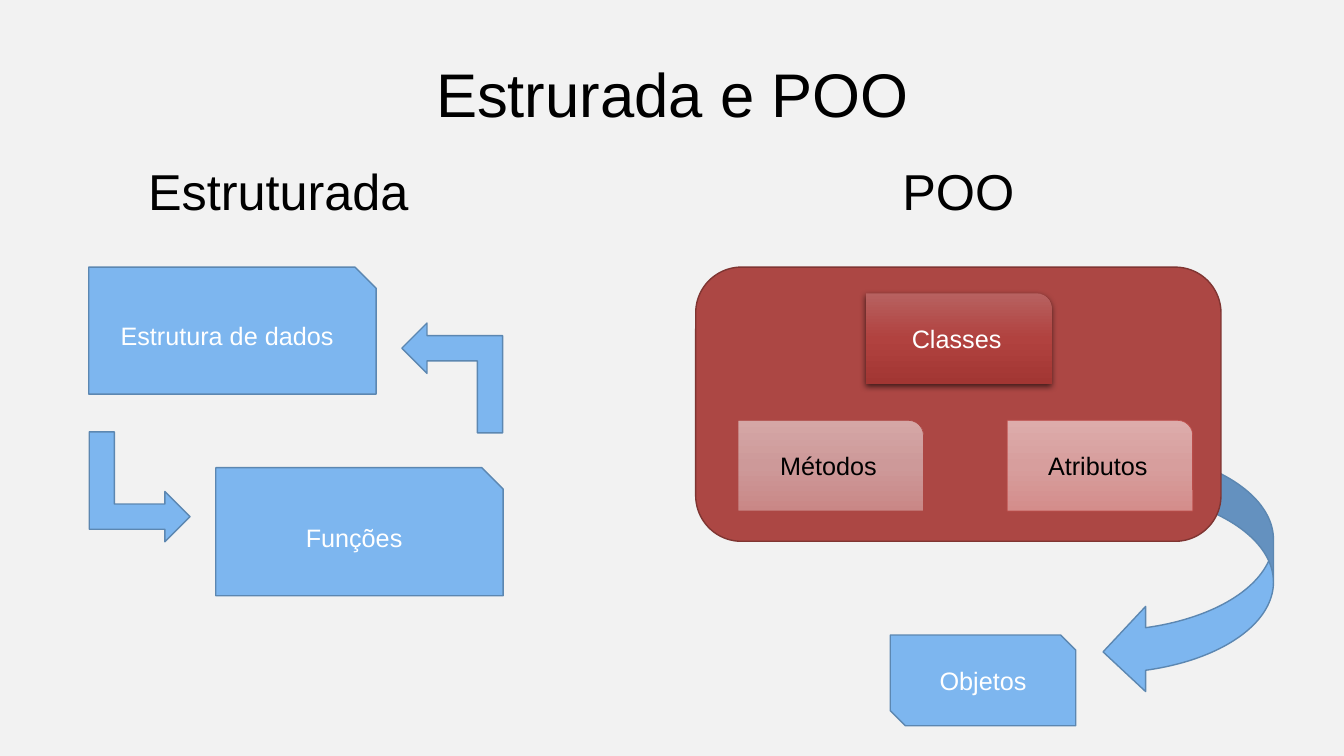
"""Build a slide comparing structured and object-oriented programming."""
from copy import deepcopy

from lxml.etree import SubElement
from pptx import Presentation
from pptx.dml.color import RGBColor
from pptx.enum.shapes import MSO_SHAPE as SHAPE
from pptx.enum.text import MSO_ANCHOR as ANCHOR, PP_ALIGN as ALIGN
from pptx.oxml.ns import qn
from pptx.util import Inches, Pt

BLUE, BLUE_EDGE = "7DB6EF", "5C87B1"
RED, RED_EDGE = "AC4744", "7F3532"
WHITE, BLACK = "FFFFFF", "000000"


def color(value):
    return RGBColor.from_string(value)


def write(frame, text, size, ink, align=ALIGN.CENTER):
    frame.text = text
    frame.word_wrap = True
    paragraph = frame.paragraphs[0]
    paragraph.alignment = align
    font = paragraph.runs[0].font
    font.name, font.size = "Arial", Pt(size)
    font.color.rgb = color(ink)


deck = Presentation()
deck.slide_width, deck.slide_height = Inches(13.33), Inches(7.5)
slide = deck.slides.add_slide(deck.slide_layouts[5])
slide.background.fill.solid()
slide.background.fill.fore_color.rgb = color("F2F2F2")

heading = slide.shapes.title
heading.left, heading.top = Inches(0.67), Inches(0.3)
heading.width, heading.height = Inches(12), Inches(1.25)
write(heading.text_frame, "Estrurada e POO", 44, BLACK)
heading.text_frame.vertical_anchor = ANCHOR.MIDDLE

flat_parts = [
    (SHAPE.CURVED_LEFT_ARROW, 10.94, 4.45, 1.69, 2.44, 0, BLUE, BLUE_EDGE, ""),
    (SHAPE.SNIP_1_RECTANGLE, 0.88, 2.65, 2.85, 1.26, 0, BLUE, BLUE_EDGE, "Estrutura de dados"),
    (SHAPE.SNIP_1_RECTANGLE, 2.14, 4.64, 2.85, 1.27, 0, BLUE, BLUE_EDGE, "Funções"),
    (SHAPE.BENT_UP_ARROW, 3.94, 3.25, 1.09, 1, 270, BLUE, BLUE_EDGE, ""),
    (SHAPE.BENT_UP_ARROW, 0.84, 4.33, 1.09, 1, 90, BLUE, BLUE_EDGE, ""),
    (SHAPE.SNIP_2_DIAG_RECTANGLE, 8.83, 6.3, 1.84, 0.9, 0, BLUE, BLUE_EDGE, "Objetos"),
    (SHAPE.ROUNDED_RECTANGLE, 6.9, 2.65, 5.21, 2.72, 0, RED, RED_EDGE, ""),
]
for kind, left, top, width, height, turn, fill, edge, label in flat_parts:
    part = slide.shapes.add_shape(kind, Inches(left), Inches(top), Inches(width), Inches(height))
    part.shadow.inherit = False
    part.rotation = turn
    part.fill.solid()
    part.fill.fore_color.rgb = color(fill)
    part.line.color.rgb = color(edge)
    part.line.width = Pt(1)
    if label:
        write(part.text_frame, label, 18, WHITE)

class_parts = [
    ("Classes", 8.59, 2.91, ("B76160", "B1423F", "A23633"), None, WHITE),
    ("Métodos", 7.32, 4.17, ("D5A7A6", "CD9999", "C98786"), RED, BLACK),
    ("Atributos", 9.99, 4.17, ("DDACAB", "D79E9D", "D48D8B"), "C0504D", BLACK),
]
for label, left, top, shades, edge, ink in class_parts:
    card = slide.shapes.add_shape(
        SHAPE.ROUND_1_RECTANGLE, Inches(left), Inches(top), Inches(1.84), Inches(0.9))
    card.shadow.inherit = False
    card.fill.gradient()
    card.fill.gradient_angle = 270
    properties = card._element.spPr
    first_stop = properties.find(".//" + qn("a:gs"))
    first_stop.addnext(deepcopy(first_stop))
    for stop, position, shade in zip(card.fill.gradient_stops, (0, 0.5, 1), shades):
        stop.position = position
        stop.color.rgb = color(shade)
    if edge:
        card.line.color.rgb = color(edge)
        card.line.width = Pt(0.5)
    else:
        card.line.fill.background()
        glow = SubElement(properties.find(qn("a:effectLst")), qn("a:outerShdw"),
                          blurRad=str(Pt(4.5)), dist=str(Pt(1.5)), dir="5400000", rotWithShape="0")
        tone = SubElement(glow, qn("a:srgbClr"), val=BLACK)
        SubElement(tone, qn("a:alpha"), val="63000")
    write(card.text_frame, label, 18, ink)

for paradigm, left, align in [("Estruturada", 1.37, ALIGN.LEFT), ("POO", 7.54, ALIGN.CENTER)]:
    caption = slide.shapes.add_textbox(Inches(left), Inches(1.54), Inches(3.93), Inches(0.71))
    write(caption.text_frame, paradigm, 36, BLACK, align)

deck.save("out.pptx")
